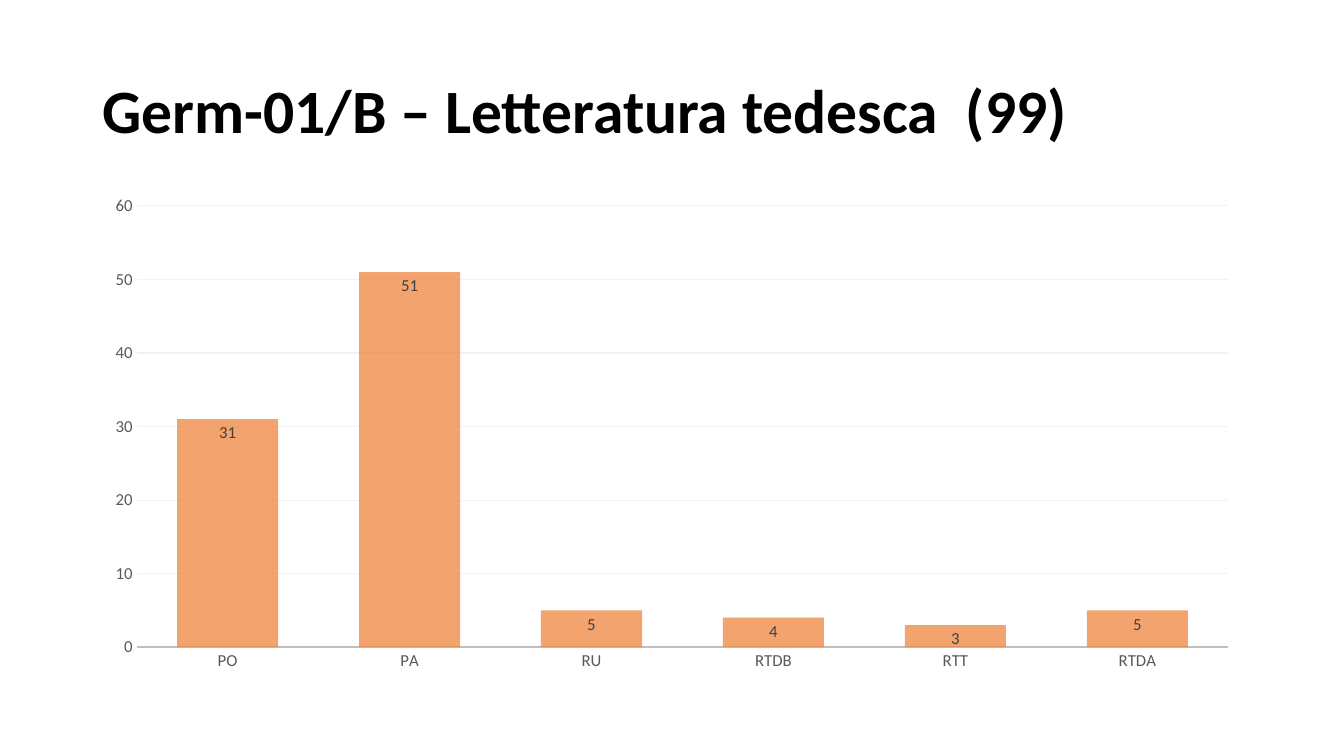
from pptx import Presentation
from pptx.chart.data import CategoryChartData
from pptx.dml.color import RGBColor
from pptx.enum.chart import XL_CHART_TYPE as ChartType
from pptx.enum.chart import XL_LABEL_POSITION as LabelPosition
from pptx.enum.chart import XL_TICK_MARK as TickMark
from pptx.enum.text import MSO_ANCHOR as Anchor
from pptx.enum.text import MSO_AUTO_SIZE as AutoSize
from pptx.enum.text import PP_ALIGN as Align
from pptx.oxml.ns import qn
from pptx.util import Cm, Pt
from lxml.etree import SubElement

FONT = "Calibri"
TITLE_ONLY = 5
STAFF = {"PO": 31, "PA": 51, "RU": 5, "RTDB": 4, "RTT": 3, "RTDA": 5}


def color(hex_value):
    return RGBColor.from_string(hex_value)


def style_font(font, size, hex_value, bold=False):
    font.name = FONT
    font.size = Pt(size)
    font.bold = bold
    font.color.rgb = color(hex_value)


def style_line(line, hex_value, width):
    line.color.rgb = color(hex_value)
    line.width = Pt(width)


def place_title(slide, text, left, top, width, height):
    title = slide.shapes.title
    title.left, title.top, title.width, title.height = left, top, width, height
    frame = title.text_frame
    frame.text = text
    frame.word_wrap = True
    frame.auto_size = AutoSize.NONE
    frame.vertical_anchor = Anchor.MIDDLE
    paragraph = frame.paragraphs[0]
    paragraph.alignment = Align.LEFT
    paragraph.line_spacing = 0.9
    style_font(paragraph.font, 44, "000000", bold=True)


def place_staff_chart(slide, left, top, width, height):
    data = CategoryChartData()
    data.categories = list(STAFF)
    data.add_series("Series 1", list(STAFF.values()))
    chart = slide.shapes.add_chart(
        ChartType.COLUMN_CLUSTERED, left, top, width, height, data
    ).chart
    chart.has_legend = False
    chart.has_title = False
    style_font(chart.font, 10, "000000")

    # Axes and gridlines
    for axis in (chart.category_axis, chart.value_axis):
        axis.major_tick_mark = axis.minor_tick_mark = TickMark.NONE
        style_font(axis.tick_labels.font, 12, "595959")
    style_line(chart.category_axis.format.line, "BFBFBF", 1.25)
    value_axis = chart.value_axis
    value_axis.minimum_scale = 0
    value_axis.maximum_scale = 60
    value_axis.major_unit = 10
    value_axis.format.line.fill.background()
    value_axis.has_major_gridlines = True
    style_line(value_axis.major_gridlines.format.line, "F2F2F2", 0.75)

    # Translucent columns
    plot = chart.plots[0]
    plot.gap_width = 80
    plot.overlap = 25
    plot.vary_by_categories = False
    series = plot.series[0]
    series.invert_if_negative = False
    series.format.fill.solid()
    series.format.fill.fore_color.rgb = color("ED7D31")
    fill_color = next(next(chart.element.iter(qn("c:ser"))).iter(qn("a:srgbClr")))
    SubElement(fill_color, qn("a:alpha"), val="70000")

    # Value labels
    labels = series.data_labels
    labels.show_value = True
    labels.position = LabelPosition.INSIDE_END
    style_font(labels.font, 12, "404040")


def main():
    presentation = Presentation()
    presentation.slide_width = Cm(33.87)
    presentation.slide_height = Cm(19.05)
    slide = presentation.slides.add_slide(presentation.slide_layouts[TITLE_ONLY])

    left, width = Cm(2.33), Cm(29.21)
    title_top, title_height = Cm(1.01), Cm(3.68)
    place_title(slide, "Germ-01/B – Letteratura tedesca  (99)",
                left, title_top, width, title_height)
    place_staff_chart(slide, left, title_top + title_height, width, Cm(12.47))

    presentation.save("out.pptx")


if __name__ == "__main__":
    main()
